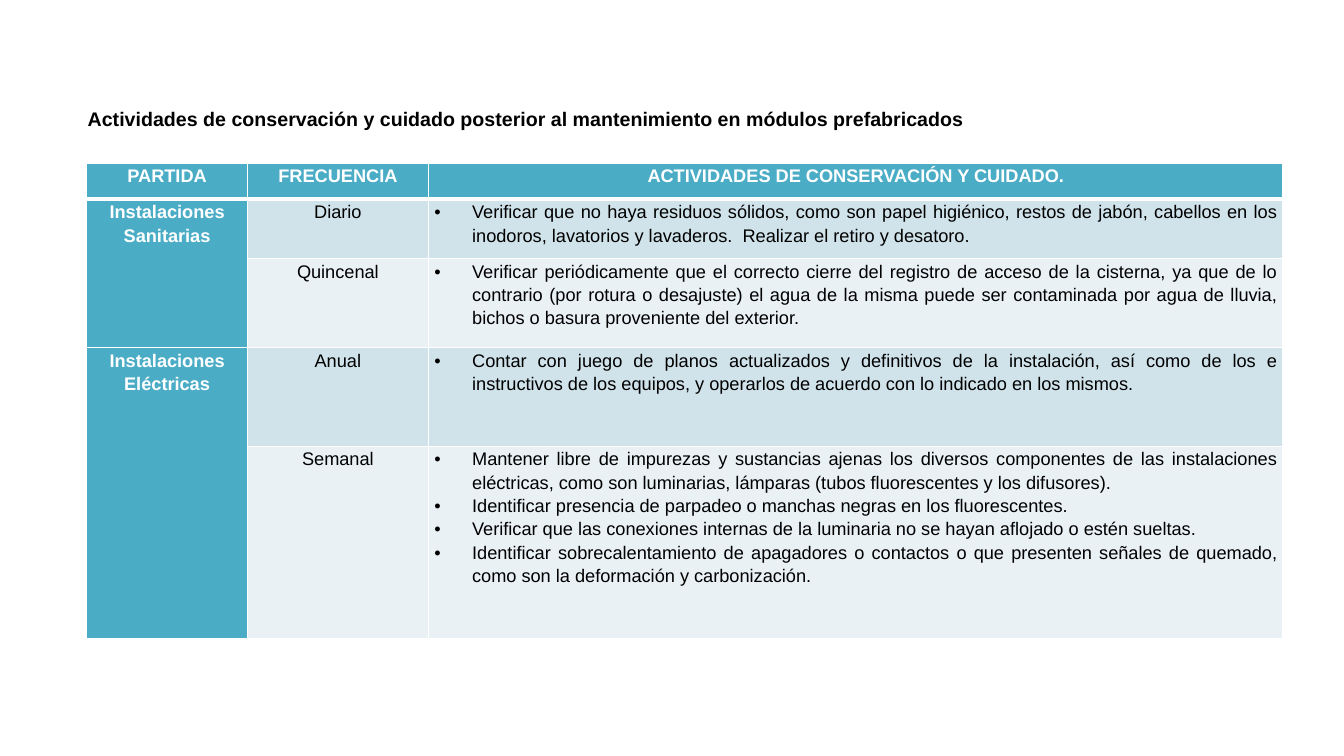
import pptx
import pptx.dml.color
import pptx.enum.text
import pptx.oxml
import pptx.oxml.ns
import pptx.util
from lxml import etree

Cm = pptx.util.Cm
Pt = pptx.util.Pt
RGB = pptx.dml.color.RGBColor
ALIGN = pptx.enum.text.PP_ALIGN
qn = pptx.oxml.ns.qn

WHITE = RGB(0xFF, 0xFF, 0xFF)
BLACK = RGB(0x00, 0x00, 0x00)
TEAL = RGB(0x4B, 0xAC, 0xC6)
BANDS = RGB(0xD0, 0xE3, 0xEA), RGB(0xE9, 0xF1, 0xF5)

TITLE = "Actividades de conservación y cuidado posterior al mantenimiento en módulos prefabricados"
HEADS = "PARTIDA", "FRECUENCIA", "ACTIVIDADES DE CONSERVACIÓN Y CUIDADO."
WIDTHS = 4.06, 4.55, 21.54
HEIGHTS = 0.91, 1.5, 2.24, 2.49, 4.85
GROUPS = {
    "Instalaciones Sanitarias": [
        ("Diario", [
            "Verificar que no haya residuos sólidos, como son papel higiénico, restos de jabón, cabellos en los inodoros, lavatorios y lavaderos.  Realizar el retiro y desatoro.",
        ]),
        ("Quincenal", [
            "Verificar periódicamente que el correcto cierre del registro de acceso de la cisterna, ya que de lo contrario (por rotura o desajuste) el agua de la misma puede ser contaminada por agua de lluvia, bichos o basura proveniente del exterior.",
        ]),
    ],
    "Instalaciones Eléctricas": [
        ("Anual", [
            "Contar con juego de planos actualizados y definitivos de la instalación, así como de los e instructivos de los equipos, y operarlos de acuerdo con lo indicado en los mismos.",
        ]),
        ("Semanal", [
            "Mantener libre de impurezas y sustancias ajenas los diversos componentes de las instalaciones eléctricas, como son luminarias, lámparas (tubos fluorescentes y los difusores).",
            "Identificar presencia de parpadeo o manchas negras en los fluorescentes.",
            "Verificar que las conexiones internas de la luminaria no se hayan aflojado o estén sueltas.",
            "Identificar sobrecalentamiento de apagadores o contactos o que presenten señales de quemado, como son la deformación y carbonización.",
        ]),
    ],
}


class Deck:
    """Holds the text style and the current slide."""

    face = "Arial"

    def __init__(self, slide):
        self.slide = slide

    def font(self, para, size, color, bold):
        font = para.font
        font.name, font.size, font.bold = self.face, Pt(size), bold
        font.color.rgb = color

    def title(self, text, left, top, width, height):
        box = self.slide.shapes.add_textbox(Cm(left), Cm(top), Cm(width), Cm(height))
        box.text_frame.word_wrap = True
        para = box.text_frame.paragraphs[0]
        para.text = text
        self.font(para, 14, BLACK, True)

    def table(self, left, top, widths, heights):
        frame = self.slide.shapes.add_table(
            len(heights), len(widths), Cm(left), Cm(top), Cm(sum(widths)), Cm(sum(heights)))
        table = frame.table
        table.first_row = table.horz_banding = False
        for col, width in zip(table.columns, widths):
            col.width = Cm(width)
        for row, height in zip(table.rows, heights):
            row.height = Cm(height)
        return table

    def border(self, cell, low):
        props = cell._tc.get_or_add_tcPr()
        for side, points in zip("LRTB", (1, 1, 1, low)):
            line = etree.SubElement(props, qn("a:ln" + side), w=str(Pt(points)))
            fill = etree.SubElement(line, qn("a:solidFill"))
            etree.SubElement(fill, qn("a:srgbClr"), val=str(WHITE))

    def bullet(self, para):
        props = para._p.get_or_add_pPr()
        props.set("marL", str(Cm(0.95)))
        props.set("indent", str(-Cm(0.95)))
        etree.SubElement(props, qn("a:buFont"), typeface=self.face)
        etree.SubElement(props, qn("a:buChar"), char="•")

    def cell(self, cell, lines, fill, strong=False, listed=False, low=1):
        self.border(cell, low)
        cell.fill.solid()
        cell.fill.fore_color.rgb = fill
        cell.margin_left = cell.margin_right = Cm(0.16)
        cell.margin_top = cell.margin_bottom = 0
        cell.text = "\n".join(lines)
        for para in cell.text_frame.paragraphs:
            para.line_spacing = 1.15
            if listed:
                para.alignment = ALIGN.JUSTIFY
                self.bullet(para)
            else:
                para.alignment = ALIGN.CENTER
                para.space_after = Pt(10)
            self.font(para, 13, WHITE if strong else BLACK, strong)


def main():
    show = pptx.Presentation()
    show.slide_width, show.slide_height = Cm(33.87), Cm(19.05)
    deck = Deck(show.slides.add_slide(show.slide_layouts[6]))

    table = deck.table(2.18, 4.11, WIDTHS, HEIGHTS)
    for col, head in enumerate(HEADS):
        deck.cell(table.cell(0, col), [head], TEAL, strong=True, low=3)
    row = 1
    for part, tasks in GROUPS.items():
        first = table.cell(row, 0)
        first.merge(table.cell(row + len(tasks) - 1, 0))
        deck.cell(first, [part], TEAL, strong=True)
        for when, lines in tasks:
            band = BANDS[(row - 1) % 2]
            deck.cell(table.cell(row, 1), [when], band)
            deck.cell(table.cell(row, 2), lines, band, listed=True)
            row += 1

    deck.title(TITLE, 1.96, 2.57, 28.7, 0.86)
    show.save("out.pptx")


if __name__ == "__main__":
    main()
